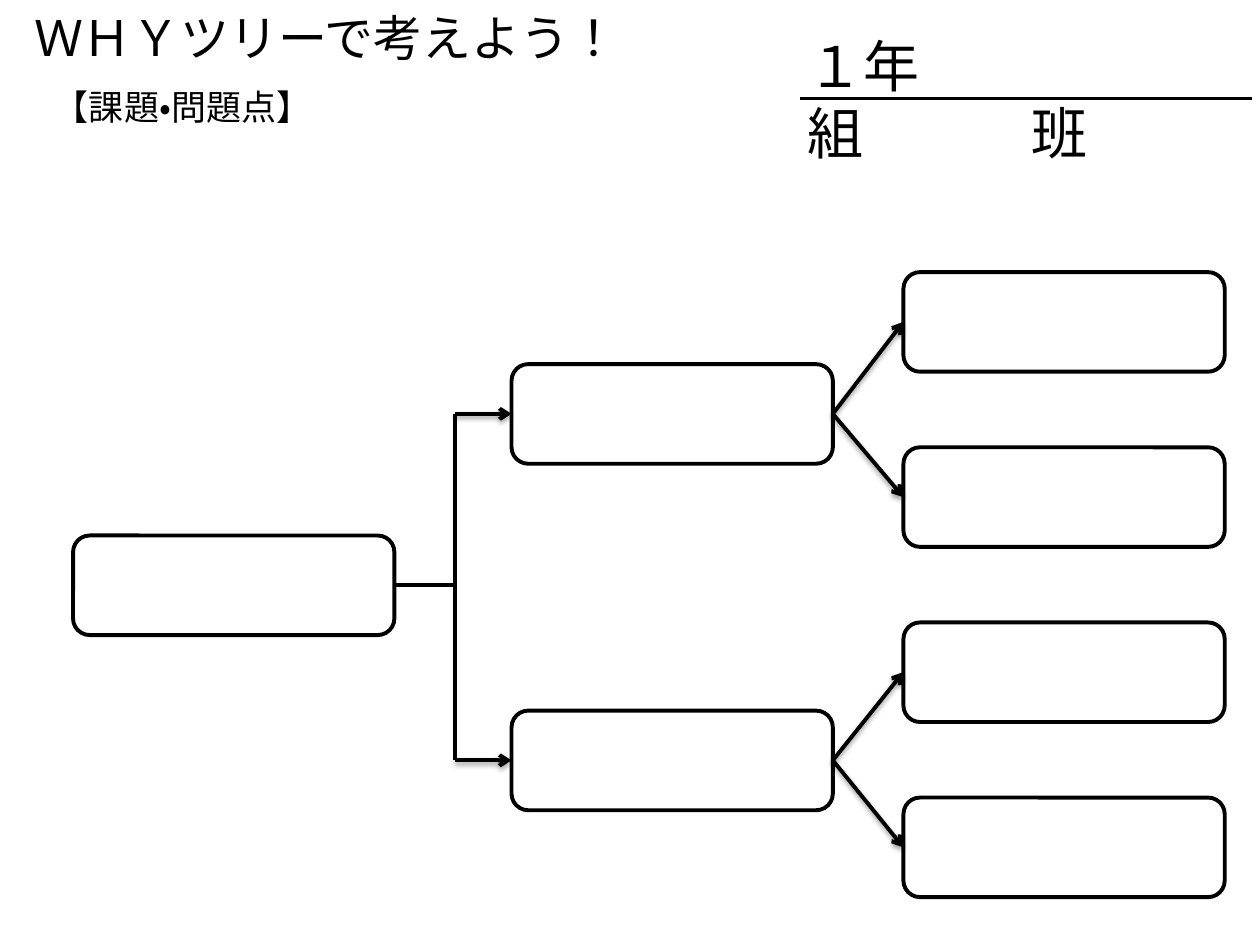
from dataclasses import dataclass

from lxml.etree import SubElement
from pptx import Presentation
from pptx.dml.color import RGBColor
from pptx.enum.lang import MSO_LANGUAGE_ID
from pptx.enum.shapes import MSO_CONNECTOR, MSO_SHAPE
from pptx.enum.text import MSO_ANCHOR, MSO_AUTO_SIZE, PP_ALIGN
from pptx.oxml.ns import qn
from pptx.util import Inches, Pt


@dataclass(frozen=True)
class Theme:
    ink: RGBColor = RGBColor(0x00, 0x00, 0x00)
    paper: RGBColor = RGBColor(0xFF, 0xFF, 0xFF)
    font: str = "Calibri"
    title_size: int = 28
    label_size: int = 20
    class_size: int = 32
    rule_width: float = 2
    line_width: float = 2.25


THEME = Theme()
RIGHT, LEFT = 3, 1
CARD_WIDTH, CARD_HEIGHT = 2.55, 0.79


def write(holder, text, *, size, tab=None):
    """Fill a text holder with one left-aligned paragraph."""
    frame = holder.text_frame
    frame.word_wrap = True
    frame.auto_size = MSO_AUTO_SIZE.SHAPE_TO_FIT_TEXT
    frame.vertical_anchor = MSO_ANCHOR.TOP
    paragraph = frame.paragraphs[0]
    paragraph.text = text
    paragraph.alignment = PP_ALIGN.LEFT
    if tab:
        tabs = SubElement(paragraph._p.get_or_add_pPr(), qn("a:tabLst"))
        SubElement(tabs, qn("a:tab"), pos=str(Inches(tab)), algn="l")
    for run in paragraph.runs:
        run.font.size = Pt(size)
        run.font.name = THEME.font
        run.font.color.rgb = THEME.ink
        run.font.language_id = MSO_LANGUAGE_ID.JAPANESE


def add_line(slide, start, end, *, width=THEME.line_width, arrow=False):
    """Draw a straight line; arrows carry a soft shadow."""
    line = slide.shapes.add_connector(
        MSO_CONNECTOR.STRAIGHT, *(Inches(v) for v in (*start, *end)))
    line.line.color.rgb = THEME.ink
    line.line.width = Pt(width)
    properties = line._element.spPr
    effects = SubElement(properties, qn("a:effectLst"))
    if arrow:
        SubElement(properties.find(qn("a:ln")), qn("a:tailEnd"), type="arrow")
        shadow = SubElement(effects, qn("a:outerShdw"), blurRad=str(Pt(3.1)),
                            dist=str(Pt(1.6)), dir="5400000", rotWithShape="0")
        shade = SubElement(shadow, qn("a:srgbClr"), val=str(THEME.ink))
        SubElement(shade, qn("a:alpha"), val="38000")
    return line


def add_card(slide, left, top):
    card = slide.shapes.add_shape(
        MSO_SHAPE.ROUNDED_RECTANGLE,
        *(Inches(v) for v in (left, top, CARD_WIDTH, CARD_HEIGHT)))
    card.shadow.inherit = False
    card.fill.solid()
    card.fill.fore_color.rgb = THEME.paper
    card.line.color.rgb = THEME.ink
    card.line.width = Pt(THEME.line_width)
    return card


def add_heading(slide, left, top):
    """Title with the problem label below it."""
    title = slide.shapes.title
    title.left, title.top = Inches(left), Inches(top)
    title.width, title.height = Inches(7.26), Inches(0.57)
    write(title, "ＷＨＹツリーで考えよう！", size=THEME.title_size)
    label = slide.shapes.add_textbox(
        Inches(left + 0.16), Inches(top + 0.62), Inches(9.68), Inches(0.44))
    write(label, "【課題・問題点】", size=THEME.label_size)


def add_class_field(slide, left, top):
    """Year, class and group entry with its rule."""
    field = slide.shapes.add_textbox(
        Inches(left), Inches(top), Inches(3.72), Inches(0.64))
    write(field, "１年\v組\t班", size=THEME.class_size, tab=1.78)
    rule_y = top + 0.58
    add_line(slide, (left + 0.04, rule_y), (left + 3.63, rule_y),
             width=THEME.rule_width)


def add_why_tree(slide, left, top):
    """Root, two causes and four deeper causes, joined left to right."""
    cause_left, leaf_left = left + 3.48, left + 6.59
    root_top = top + 2.09
    cause_tops = [top + 0.73, top + 3.48]
    leaf_tops = [top + 1.39 * i for i in range(4)]
    middle = CARD_HEIGHT / 2

    root = add_card(slide, left, root_top)
    causes = [add_card(slide, cause_left, y) for y in cause_tops]
    leaves = [add_card(slide, leaf_left, y) for y in leaf_tops]

    # Trunk from the root to both causes
    trunk_x = left + 3.03
    stem_y = root_top + middle
    stem = add_line(slide, (left + CARD_WIDTH, stem_y), (trunk_x, stem_y))
    stem.begin_connect(root, RIGHT)
    add_line(slide, *((trunk_x, y + middle) for y in cause_tops))

    for i, (cause, cause_top) in enumerate(zip(causes, cause_tops)):
        cause_y = cause_top + middle
        branch = add_line(slide, (trunk_x, cause_y), (cause_left, cause_y),
                          arrow=True)
        branch.end_connect(cause, LEFT)
        # Two deeper causes for each cause
        for j in (2 * i, 2 * i + 1):
            twig = add_line(slide, (cause_left + CARD_WIDTH, cause_y),
                            (leaf_left, leaf_tops[j] + middle), arrow=True)
            twig.begin_connect(cause, RIGHT)
            twig.end_connect(leaves[j], LEFT)


def main():
    deck = Presentation()
    deck.slide_width, deck.slide_height = Inches(10), Inches(7.5)
    slide = deck.slides.add_slide(deck.slide_layouts.get_by_name("Title Only"))
    add_heading(slide, 0.17, 0.01)
    add_class_field(slide, 6.31, 0.2)
    add_why_tree(slide, 0.58, 2.16)
    deck.save("out.pptx")


if __name__ == "__main__":
    main()
